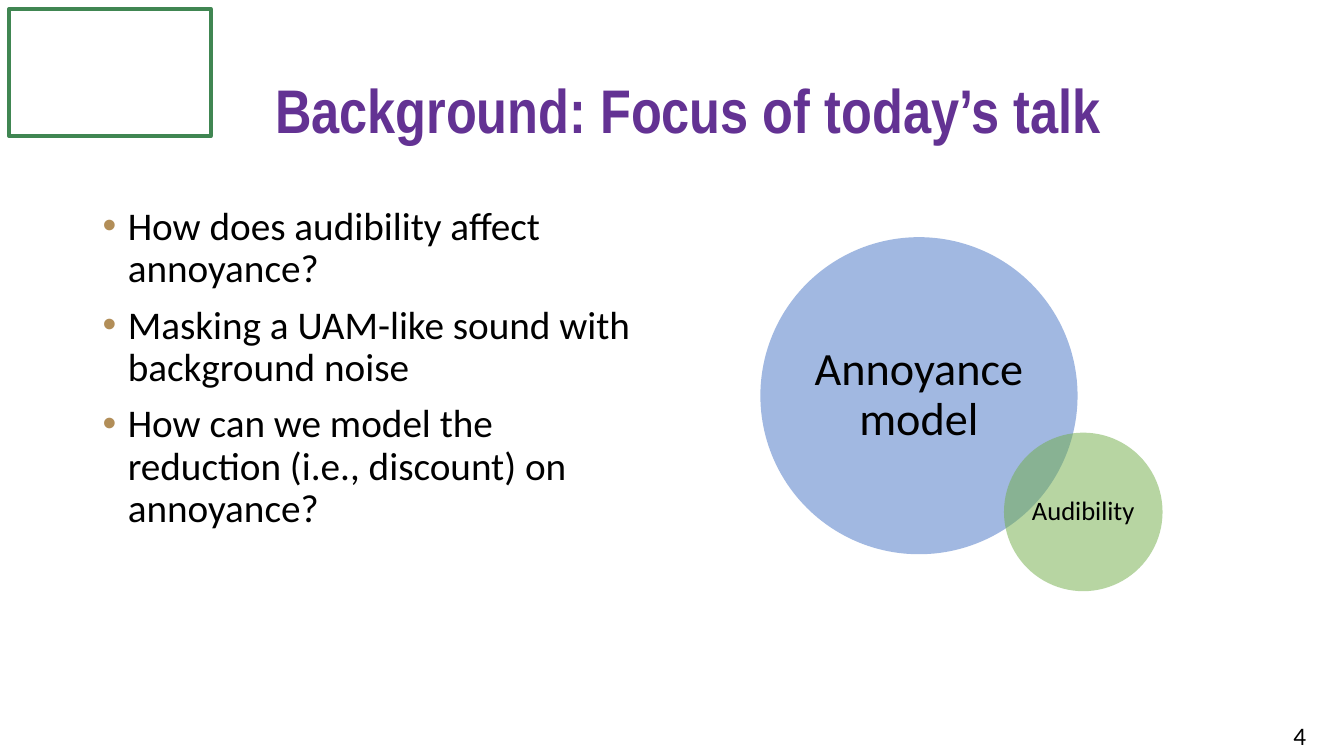
from lxml import etree
from pptx import Presentation
from pptx import util as u
from pptx.dml.color import RGBColor
from pptx.enum import shapes, text
from pptx.oxml.ns import qn

# Square grid of 40 columns by 22.5 rows
CELL = u.Inches(13.33) / 40

PURPLE = RGBColor(0x63, 0x32, 0x93)
FRAME_GREEN = RGBColor(0x40, 0x86, 0x52)
BLUE = RGBColor(0x44, 0x72, 0xC4)
GREEN = RGBColor(0x70, 0xAD, 0x47)
BLACK = RGBColor(0, 0, 0)
BULLET_COLOR = "B28E58"

QUESTIONS = [
    "How does audibility affect annoyance?",
    "Masking a UAM-like sound with background noise",
    "How can we model the reduction (i.e., discount) on annoyance?",
]


def cells(*counts):
    return [round(count * CELL) for count in counts]


def set_font(paragraph, size, color=BLACK, name="Calibri", bold=False):
    font = paragraph.font
    font.size = u.Pt(size)
    font.name = name
    font.bold = bold
    font.color.rgb = color


def add_bullet(paragraph):
    properties = paragraph._p.get_or_add_pPr()
    properties.set("marL", str(u.Inches(0.25)))
    properties.set("indent", str(-u.Inches(0.25)))
    color = etree.SubElement(properties, qn("a:buClr"))
    etree.SubElement(color, qn("a:srgbClr"), val=BULLET_COLOR)
    etree.SubElement(properties, qn("a:buFont"), typeface="Arial")
    etree.SubElement(properties, qn("a:buChar"), char="•")


def add_text(slide, box, lines, size, bulleted=False, spacing=0.9,
             anchor=text.MSO_ANCHOR.TOP, **font):
    frame = slide.shapes.add_textbox(*cells(*box)).text_frame
    frame.word_wrap = True
    frame.vertical_anchor = anchor
    for index, line in enumerate(lines):
        paragraph = frame.add_paragraph() if index else frame.paragraphs[0]
        paragraph.text = line
        paragraph.line_spacing = spacing
        if index:
            paragraph.space_before = u.Pt(10)
        if bulleted:
            add_bullet(paragraph)
        set_font(paragraph, size, **font)


def add_logo_frame(slide, box):
    shape = slide.shapes.add_shape(shapes.MSO_SHAPE.RECTANGLE, *cells(*box))
    shape.shadow.inherit = False
    shape.fill.background()
    shape.line.color.rgb = FRAME_GREEN
    shape.line.width = u.Pt(3)


def add_venn_circle(slide, left, top, diameter, color, label, size):
    """Add a half-transparent circle with a centred label."""
    shape = slide.shapes.add_shape(
        shapes.MSO_SHAPE.OVAL, *cells(left, top, diameter, diameter))
    shape.shadow.inherit = False
    shape.line.fill.background()
    shape.fill.solid()
    shape.fill.fore_color.rgb = color
    fill_color = shape._element.spPr.find(qn("a:solidFill"))[0]
    etree.SubElement(fill_color, qn("a:alpha"), val="50000")

    frame = shape.text_frame
    frame.word_wrap = True
    frame.vertical_anchor = text.MSO_ANCHOR.MIDDLE
    inset = cells(diameter * 0.02)[0]
    frame.margin_left = frame.margin_right = inset
    frame.margin_top = frame.margin_bottom = inset
    paragraph = frame.paragraphs[0]
    paragraph.text = label
    paragraph.alignment = text.PP_ALIGN.CENTER
    paragraph.line_spacing = 0.9
    set_font(paragraph, size)


def main():
    presentation = Presentation()
    presentation.slide_width = u.Inches(13.33)
    presentation.slide_height = u.Inches(7.5)
    slide = presentation.slides.add_slide(presentation.slide_layouts[6])

    add_logo_frame(slide, (0.27, 0.27, 6, 3.78))
    add_text(slide, (2.76, 6, 17, 14.28), QUESTIONS, 28, bulleted=True)
    add_text(slide, (7.89, 1.2, 29.37, 4.35),
             ["Background: Focus of today’s talk"], 44,
             anchor=text.MSO_ANCHOR.MIDDLE,
             color=PURPLE, name="Arial Narrow", bold=True)

    diameter = 9.44
    add_venn_circle(slide, 22.63, 7.06, diameter, BLUE, "Annoyance model", 33)
    add_venn_circle(slide, 29.88, 12.88, diameter / 2, GREEN, "Audibility", 19)

    add_text(slide, (38.2, 21.3, 1.56, 1.2), ["4"], 18, spacing=1.0)
    presentation.save("out.pptx")


if __name__ == "__main__":
    main()
